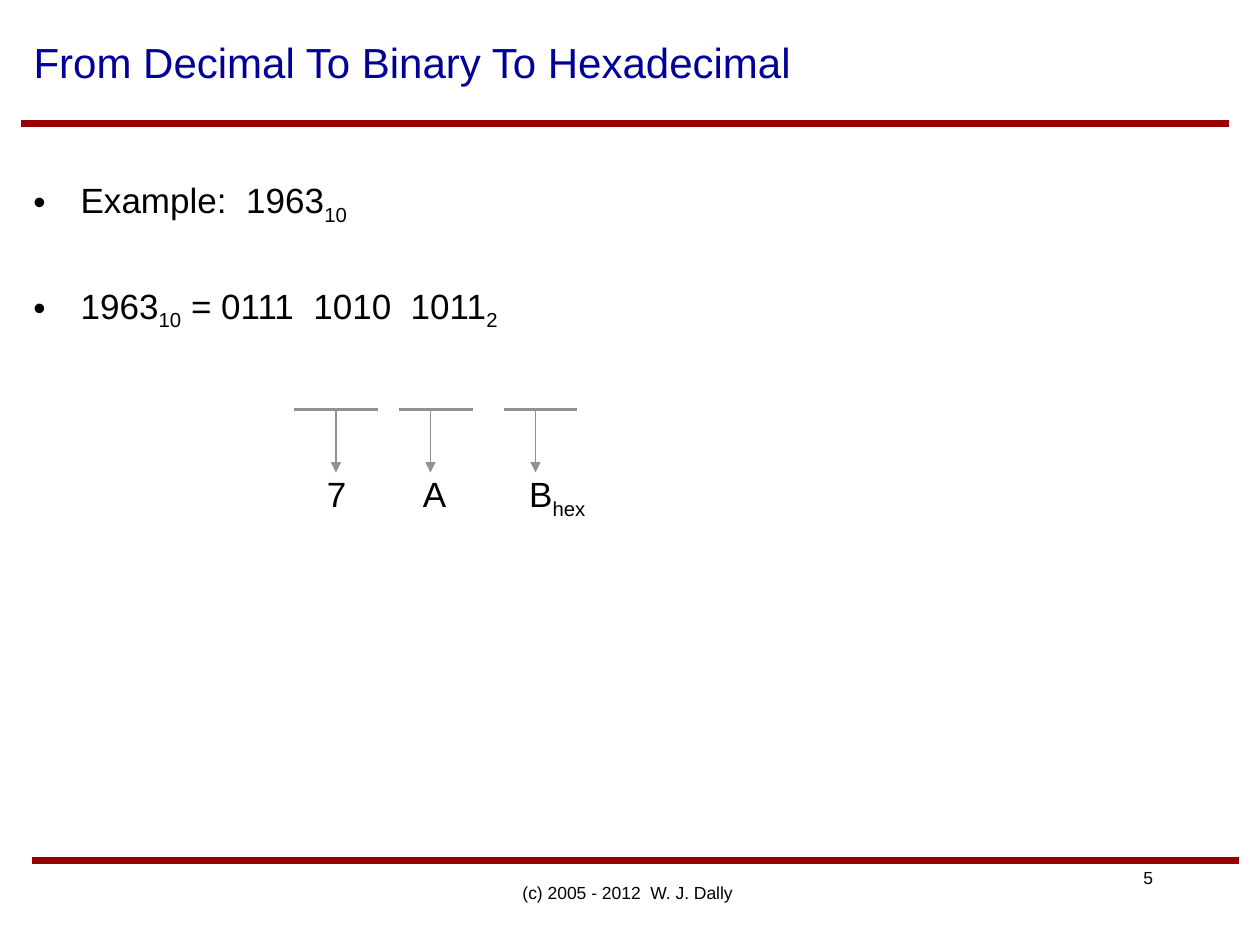
"""Build a slide converting a decimal number to binary and hexadecimal."""
from lxml import etree
from pptx import Presentation
from pptx import util as u
from pptx.dml.color import RGBColor
from pptx.enum import shapes, text
from pptx.oxml import ns

COLORS = {"title": "000099", "text": "000000", "rule": "990000", "mark": "919191"}
LEFT, CENTER, RIGHT = text.PP_ALIGN.LEFT, text.PP_ALIGN.CENTER, text.PP_ALIGN.RIGHT
TOP, MIDDLE = text.MSO_ANCHOR.TOP, text.MSO_ANCHOR.MIDDLE


class SlideBuilder:
    """Holds the style and the current slide."""

    font = "Arial"
    inset = (7.2, 3.6, 7.2, 3.6)

    def __init__(self, slide):
        self.slide = slide

    def line(self, start, end, color, width, arrow=False):
        connector = self.slide.shapes.add_connector(
            shapes.MSO_CONNECTOR.STRAIGHT, *(u.Pt(value) for value in (*start, *end)))
        connector.line.color.rgb = RGBColor.from_string(COLORS[color])
        connector.line.width = u.Pt(width)
        properties = connector.element.spPr
        if arrow:
            outline = properties.find(ns.qn("a:ln"))
            etree.SubElement(outline, ns.qn("a:tailEnd"), type="triangle")
        etree.SubElement(properties, ns.qn("a:effectLst"))

    def frame(self, shape, box, inset, anchor, wrap):
        shape.left, shape.top, shape.width, shape.height = (u.Pt(value) for value in box)
        frame = shape.text_frame
        frame.margin_left, frame.margin_top, frame.margin_right, frame.margin_bottom = (
            u.Pt(value) for value in inset)
        frame.vertical_anchor = anchor
        frame.word_wrap = wrap
        frame.auto_size = text.MSO_AUTO_SIZE.NONE
        return frame

    def add_runs(self, paragraph, runs, size, color="text", align=LEFT):
        paragraph.alignment = align
        for index, content in enumerate(runs):
            run = paragraph.add_run()
            run.text = content
            run.font.name = self.font
            run.font.size = u.Pt(size)
            run.font.color.rgb = RGBColor.from_string(COLORS[color])
            if index % 2:
                run._r.get_or_add_rPr().set("baseline", "-25000")

    def title(self, content, box):
        frame = self.frame(self.slide.shapes.title, box, self.inset, MIDDLE, True)
        self.add_runs(frame.paragraphs[0], [content], 24, "title")

    def label(self, runs, box, size, align, inset=inset, anchor=TOP, wrap=False):
        shape = self.slide.shapes.add_textbox(0, 0, 0, 0)
        frame = self.frame(shape, box, inset, anchor, wrap)
        self.add_runs(frame.paragraphs[0], runs, size, align=align)

    def bullets(self, items, box, inset, gap):
        shape = self.slide.shapes.add_textbox(0, 0, 0, 0)
        frame = self.frame(shape, box, inset, TOP, True)
        for index, runs in enumerate(items):
            paragraph = frame.add_paragraph() if index else frame.paragraphs[0]
            paragraph.space_before = u.Pt(gap if index else 0)
            self.add_runs(paragraph, runs, 20)
            properties = paragraph._p.get_or_add_pPr()
            properties.set("marL", str(u.Pt(27)))
            properties.set("indent", str(-u.Pt(27)))
            etree.SubElement(properties, ns.qn("a:buFont"), typeface=self.font)
            etree.SubElement(properties, ns.qn("a:buChar"), char="•")


def main():
    presentation = Presentation()
    presentation.slide_width, presentation.slide_height = u.Pt(720), u.Pt(540)
    title_only = presentation.slide_layouts[5]
    builder = SlideBuilder(presentation.slides.add_slide(title_only))

    for left, top in ((12, 70.5), (18, 492)):
        builder.line((left, top), (left + 690, top), "rule", 4)
    builder.label(["5"], (540, 492, 126, 19.5), 10, RIGHT, wrap=True)
    builder.label(["(c) 2005 - 2012  W. J. Dally "], (246, 492, 228, 36), 10, CENTER,
                  anchor=MIDDLE)
    builder.title("From Decimal To Binary To Hexadecimal", (12, 0, 708, 70.5))
    builder.bullets(
        [["Example:  1963", "10"], ["1963", "10", " = 0111  1010  1011", "2"]],
        (12, 70.5, 690, 421.5), (7.2, 31.6, 7.2, 3.6), 33)

    bar_top, digit_top = 234, 270
    digits = (
        (168, 216, 192, ["7"], 187, 11),
        (228, 270, 246, ["A"], 241, 14),
        (288, 330, 306, ["B", "hex"], 300, 34.5),
    )
    for start, end, arrow, runs, left, width in digits:
        builder.line((start, bar_top), (end, bar_top), "mark", 2.25)
        builder.label(runs, (left, digit_top, width, 24), 20, RIGHT, inset=(0, 0, 0, 0))
        builder.line((arrow, bar_top), (arrow, digit_top), "mark", 0.75, arrow=True)

    presentation.save("out.pptx")


if __name__ == "__main__":
    main()
